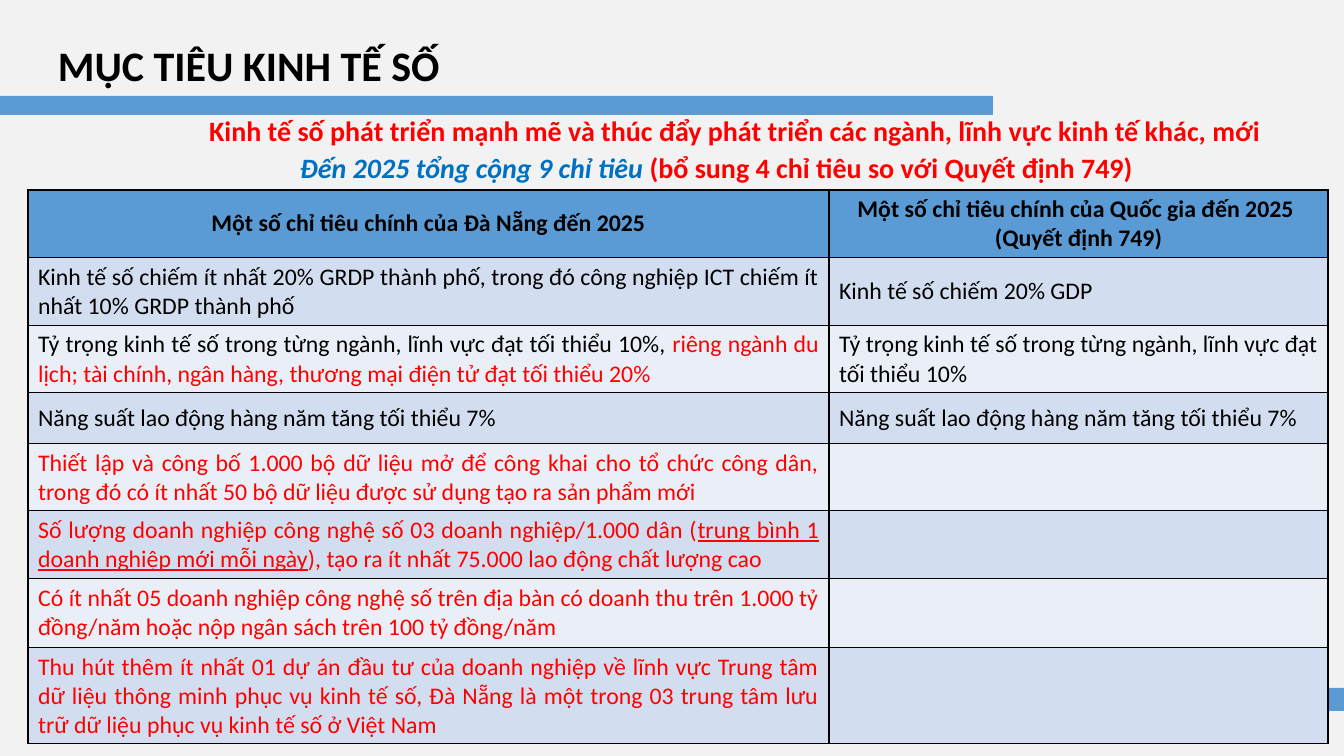
"""Builds the slide on digital economy targets for 2025."""
from lxml.etree import SubElement
from pptx import Presentation
from pptx.dml.color import RGBColor
from pptx.enum.shapes import MSO_SHAPE
from pptx.enum.text import MSO_ANCHOR, PP_ALIGN
from pptx.oxml.ns import qn
from pptx.util import Emu, Pt

EMU_PER_PX = 914400 / 100.8
BLUE, BLACK, RED, ACCENT = "5B9BD5", "000000", "FF0000", "0070C0"
BANDS = ("D2DEEF", "EAEFF7")
COL_WIDTHS = (801, 499)
ROW_HEIGHTS = (67, 68, 67, 51, 67, 68, 69, 96)

HEADERS = (
    ["Một số chỉ tiêu chính của Đà Nẵng đến 2025"],
    ["Một số chỉ tiêu chính của Quốc gia đến 2025 ", "(Quyết định 749)"],
)
PRODUCTIVITY = "Năng suất lao động hàng năm tăng tối thiểu 7%"
TARGETS = (
    ([("Kinh tế số chiếm ít nhất 20% GRDP thành phố, trong đó công nghiệp ICT "
       "chiếm ít nhất 10% GRDP thành phố", BLACK)],
     "Kinh tế số chiếm 20% GDP"),
    ([("Tỷ trọng kinh tế số trong từng ngành, lĩnh vực đạt tối thiểu 10%, ", BLACK),
      ("riêng ngành du lịch; tài chính, ngân hàng, thương mại điện tử đạt tối thiểu 20%", RED)],
     "Tỷ trọng kinh tế số trong từng ngành, lĩnh vực đạt tối thiểu 10%"),
    ([(PRODUCTIVITY, BLACK)], PRODUCTIVITY),
    ([("Thiết lập và công bố 1.000 bộ dữ liệu mở để công khai cho tổ chức công dân, "
       "trong đó có ít nhất 50 bộ dữ liệu được sử dụng tạo ra sản phẩm mới", RED)], ""),
    ([("Số lượng doanh nghiệp công nghệ số 03 doanh nghiệp/1.000 dân (", RED),
      ("trung bình 1 doanh nghiệp mới mỗi ngày", RED, {"underline": True}),
      ("), tạo ra ít nhất 75.000 lao động chất lượng cao ", RED)], ""),
    ([("Có ít nhất 05 doanh nghiệp công nghệ số trên địa bàn có doanh thu trên 1.000 "
       "tỷ đồng/năm hoặc nộp ngân sách trên 100 tỷ đồng/năm", RED)], ""),
    ([("Thu hút thêm ít nhất 01 dự án đầu tư của doanh nghiệp về lĩnh vực Trung tâm "
       "dữ liệu thông minh phục vụ kinh tế số, Đà Nẵng là một trong 03 trung tâm lưu "
       "trữ dữ liệu phục vụ kinh tế số ở Việt Nam", RED)], ""),
)


def px(n):
    """Turn pixels into EMU."""
    return Emu(round(n * EMU_PER_PX))


def paint(fill, color):
    """Give a fill one solid colour."""
    fill.solid()
    fill.fore_color.rgb = RGBColor.from_string(color)


def add_run(p, text, color, size, **formats):
    """Append a formatted run to a paragraph."""
    r = p.add_run()
    r.text = text
    for name, value in {"name": "Calibri", "size": Pt(size), **formats}.items():
        setattr(r.font, name, value)
    r.font.color.rgb = RGBColor.from_string(color)


def add_bar(s, *box):
    """Draw a plain blue bar."""
    sp = s.shapes.add_shape(MSO_SHAPE.RECTANGLE, *map(px, box))
    sp.shadow.inherit = False
    paint(sp.fill, BLUE)
    sp.line.fill.background()


def add_text(s, box, runs, size, wrap=True, **formats):
    """Add a one-paragraph bold text box."""
    tf = s.shapes.add_textbox(*map(px, box)).text_frame
    tf.word_wrap = wrap
    p = tf.paragraphs[0]
    for name, value in formats.items():
        setattr(p, name, value)
    for text, color, italic in runs:
        add_run(p, text, color, size, bold=True, italic=italic)


def style_cell(cell, color):
    """Set a cell's borders, fill and anchor."""
    tcPr = cell._tc.get_or_add_tcPr()
    for side in ("a:lnL", "a:lnR", "a:lnT", "a:lnB"):
        ln = SubElement(tcPr, qn(side), w=str(Pt(1)))
        SubElement(SubElement(ln, qn("a:solidFill")), qn("a:srgbClr"), val=BLACK)
    paint(cell.fill, color)
    cell.vertical_anchor = MSO_ANCHOR.MIDDLE


def fill_cell(cell, color, paragraphs, align, bold):
    """Style a cell and write its paragraphs of runs."""
    style_cell(cell, color)
    tf = cell.text_frame
    for i, runs in enumerate(paragraphs):
        p = tf.add_paragraph() if i else tf.paragraphs[0]
        p.alignment = align
        for text, ink, *extra in runs:
            add_run(p, text, ink, 17, bold=bold, **(extra[0] if extra else {}))


def add_targets(s, left, top):
    """Add the table that compares city and national targets."""
    box = (left, top, sum(COL_WIDTHS), sum(ROW_HEIGHTS))
    table = s.shapes.add_table(len(ROW_HEIGHTS), len(COL_WIDTHS), *map(px, box)).table
    for col, width in zip(table.columns, COL_WIDTHS):
        col.width = px(width)
    for row, height in zip(table.rows, ROW_HEIGHTS):
        row.height = px(height)
    for c, lines in enumerate(HEADERS):
        fill_cell(table.cell(0, c), BLUE, [[(line, BLACK)] for line in lines],
                  PP_ALIGN.CENTER, True)
    for r, (city, nation) in enumerate(TARGETS, 1):
        for c, runs in enumerate((city, [(nation, BLACK)] if nation else [])):
            fill_cell(table.cell(r, c), BANDS[(r - 1) % 2], [runs] if runs else [],
                      PP_ALIGN.JUSTIFY, False)


def main():
    """Build and save the slide."""
    prs = Presentation()
    prs.slide_width, prs.slide_height = px(1344), px(756)
    s = prs.slides.add_slide(prs.slide_layouts[6])
    paint(s.background.fill, "F2F2F2")
    add_bar(s, 1251, 688, 93, 23)
    add_text(s, (48, 35, 1150, 61), [("MỤC TIÊU KINH TẾ SỐ", BLACK, False)], 30)
    add_bar(s, 0, 96, 993, 19)
    add_targets(s, 28, 190)
    add_text(s, (191, 109, 1088, 44),
             [("Kinh tế số phát triển mạnh mẽ và thúc đẩy phát triển các ngành, "
               "lĩnh vực kinh tế khác, mới", RED, False)],
             20, alignment=PP_ALIGN.CENTER, space_before=Pt(3), space_after=Pt(3))
    add_text(s, (290, 146, 855, 44),
             [("Đến 2025 tổng cộng 9 chỉ tiêu", ACCENT, True),
              (" (bổ sung 4 chỉ tiêu so với Quyết định 749)", RED, False)],
             20, wrap=False)
    prs.save("out.pptx")


if __name__ == "__main__":
    main()
